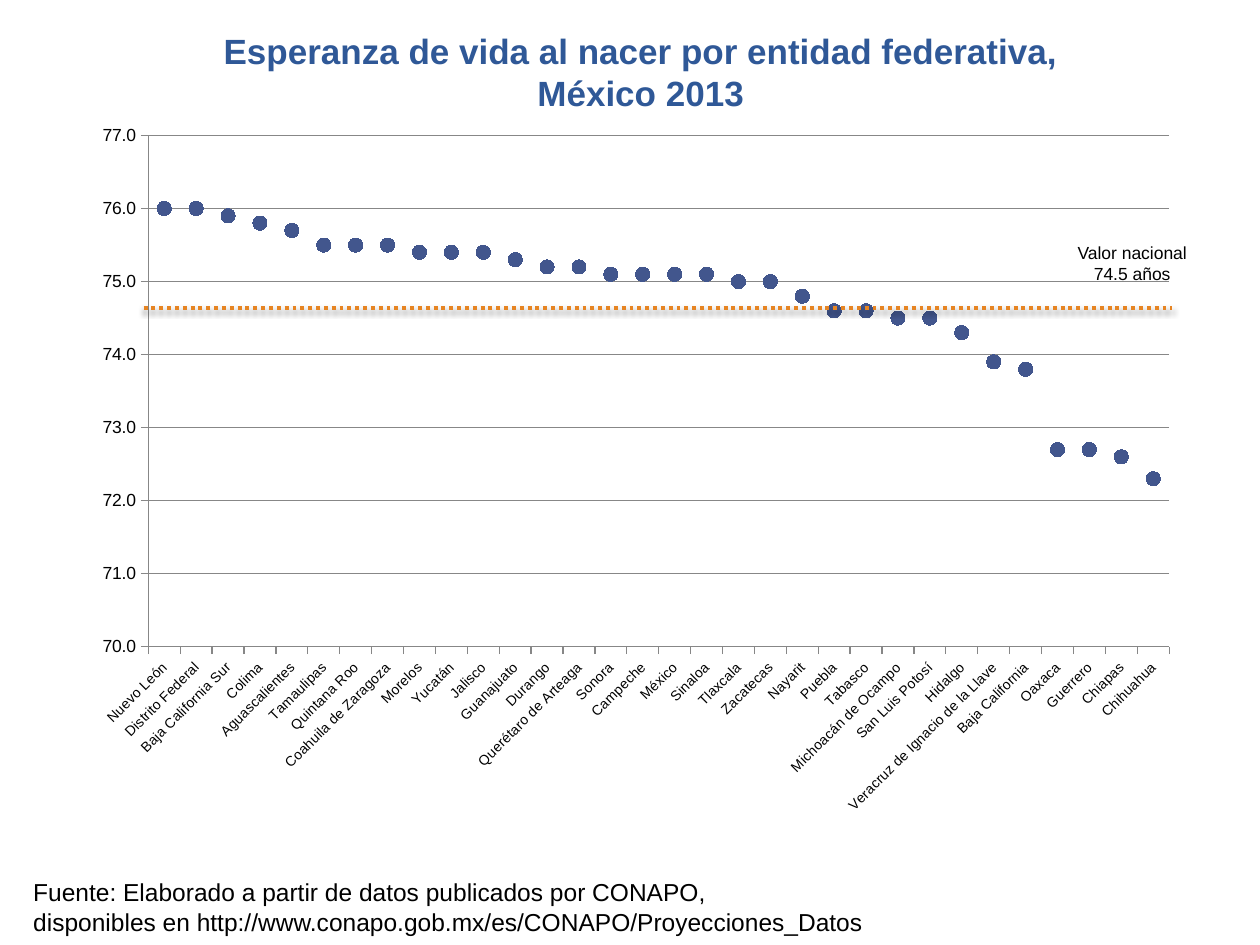
import pptx
import pptx.chart.data
import pptx.dml.color
import pptx.enum.chart
import pptx.enum.dml
import pptx.enum.shapes
import pptx.enum.text
import pptx.oxml
import pptx.oxml.ns
import pptx.util

COLUMNS, ROWS = 100, 75
BLACK = "000000"
GRID_GRAY = "878787"
MARKER_BLUE = "42568D"
LEFT = pptx.enum.text.PP_ALIGN.LEFT
CENTER = pptx.enum.text.PP_ALIGN.CENTER

LIFE_EXPECTANCY = {
    "Nuevo León": 76.0, "Distrito Federal": 76.0, "Baja California Sur": 75.9,
    "Colima": 75.8, "Aguascalientes": 75.7, "Tamaulipas": 75.5,
    "Quintana Roo": 75.5, "Coahuila de Zaragoza": 75.5, "Morelos": 75.4,
    "Yucatán": 75.4, "Jalisco": 75.4, "Guanajuato": 75.3, "Durango": 75.2,
    "Querétaro de Arteaga": 75.2, "Sonora": 75.1, "Campeche": 75.1,
    "México": 75.1, "Sinaloa": 75.1, "Tlaxcala": 75.0, "Zacatecas": 75.0,
    "Nayarit": 74.8, "Puebla": 74.6, "Tabasco": 74.6,
    "Michoacán de Ocampo": 74.5, "San Luis Potosí": 74.5, "Hidalgo": 74.3,
    "Veracruz de Ignacio de la Llave": 73.9, "Baja California": 73.8,
    "Oaxaca": 72.7, "Guerrero": 72.7, "Chiapas": 72.6, "Chihuahua": 72.3,
}


def color(value):
    return pptx.dml.color.RGBColor.from_string(value)


def xml(tag, content):
    namespaces = pptx.oxml.ns.nsdecls("a", "c")
    return pptx.oxml.parse_xml(f"<{tag} {namespaces}>{content}</{tag}>")


def style_font(font, size, fill=BLACK, bold=False):
    font.name = "Arial"
    font.size = pptx.util.Pt(size)
    font.bold = bold
    font.color.rgb = color(fill)


def write_text(shape, lines, size, fill=BLACK, bold=False, align=LEFT, wrap=True):
    frame = shape.text_frame
    frame.word_wrap = wrap
    frame.vertical_anchor = pptx.enum.text.MSO_ANCHOR.TOP
    frame.auto_size = pptx.enum.text.MSO_AUTO_SIZE.SHAPE_TO_FIT_TEXT
    frame.text = "\n".join(lines)
    for paragraph in frame.paragraphs:
        paragraph.alignment = align
        style_font(paragraph.font, size, fill, bold)


class SlideBuilder:
    def __init__(self, presentation):
        self.column = presentation.slide_width / COLUMNS
        self.row = presentation.slide_height / ROWS
        self.slide = presentation.slides.add_slide(presentation.slide_layouts[5])

    def place(self, left, top, width, height):
        return [round(left * self.column), round(top * self.row),
                round(width * self.column), round(height * self.row)]

    def title(self, box, text, **style):
        shape = self.slide.shapes.title
        shape.left, shape.top, shape.width, shape.height = self.place(*box)
        write_text(shape, [text], **style)

    def text(self, box, lines, **style):
        shape = self.slide.shapes.add_textbox(*self.place(*box))
        write_text(shape, lines, wrap=False, **style)

    def dotted_line(self, left, right, row, fill, width):
        connector = self.slide.shapes.add_connector(
            pptx.enum.shapes.MSO_CONNECTOR.STRAIGHT,
            *self.place(left, row, right, row))
        connector.line.color.rgb = color(fill)
        connector.line.width = pptx.util.Pt(width)
        connector.line.dash_style = pptx.enum.dml.MSO_LINE.ROUND_DOT
        connector._element.spPr.append(xml(
            "a:effectLst",
            '<a:outerShdw blurRad="39370" dist="20320" dir="5400000" rotWithShape="0">'
            '<a:srgbClr val="000000"><a:alpha val="38000"/></a:srgbClr></a:outerShdw>'))

    def marker_chart(self, box, values, plot_box):
        data = pptx.chart.data.CategoryChartData(number_format="##0.0")
        data.categories = list(values)
        data.add_series("Series 1", list(values.values()))
        chart = self.slide.shapes.add_chart(
            pptx.enum.chart.XL_CHART_TYPE.LINE_MARKERS, *self.place(*box), data).chart
        chart.has_legend = False
        chart.has_title = False
        style_font(chart.font, 10)
        chart.plots[0].vary_by_categories = False
        self.style_series(chart.plots[0].series[0])
        self.style_axes(chart)
        self.fix_plot_area(chart, box, plot_box)

    def style_series(self, series):
        series.smooth = False
        series.format.line.fill.background()
        series.marker.style = pptx.enum.chart.XL_MARKER_STYLE.CIRCLE
        series.marker.size = 8
        series.marker.format.fill.solid()
        series.marker.format.fill.fore_color.rgb = color(MARKER_BLUE)
        series.marker.format.line.color.rgb = color(MARKER_BLUE)

    def style_axes(self, chart):
        value_axis, category_axis = chart.value_axis, chart.category_axis
        value_axis.minimum_scale, value_axis.maximum_scale = 70, 77
        value_axis.major_unit = 1
        value_axis.has_major_gridlines = True
        value_axis.tick_labels.number_format = "##0.0"
        value_axis.tick_labels.number_format_is_linked = False
        for axis, size in ((value_axis, 10), (category_axis, 8)):
            axis.major_tick_mark = pptx.enum.chart.XL_TICK_MARK.OUTSIDE
            axis.format.line.color.rgb = color(GRID_GRAY)
            style_font(axis.tick_labels.font, size)
        value_axis.major_gridlines.format.line.color.rgb = color(GRID_GRAY)
        label_body = category_axis._element.find(
            ".//" + pptx.oxml.ns.qn("a:bodyPr"))
        label_body.set("rot", "-2700000")
        label_body.set("vert", "horz")

    def fix_plot_area(self, chart, box, plot_box):
        left, top, width, height = box
        plot_left, plot_top, plot_width, plot_height = plot_box
        shares = ((plot_left - left) / width, (plot_top - top) / height,
                  plot_width / width, plot_height / height)
        area = chart._chartSpace.chart.plotArea
        for layout in area.findall(pptx.oxml.ns.qn("c:layout")):
            area.remove(layout)
        modes = '<c:layoutTarget val="inner"/><c:xMode val="edge"/><c:yMode val="edge"/>'
        sizes = "".join(f'<c:{key} val="{share:.5f}"/>' for key, share in zip("xywh", shares))
        area.insert(0, xml("c:layout", f"<c:manualLayout>{modes}{sizes}</c:manualLayout>"))


def main():
    presentation = pptx.Presentation()
    presentation.slide_width = pptx.util.Inches(10)
    presentation.slide_height = pptx.util.Inches(7.5)
    builder = SlideBuilder(presentation)
    builder.title((15.7, 1.85, 70.3, 7.7),
                  "Esperanza de vida al nacer por entidad federativa, México 2013",
                  size=20, fill="2F5897", bold=True, align=CENTER)
    builder.marker_chart((6.4, 8.9, 88.1, 56.9), LIFE_EXPECTANCY,
                         plot_box=(11.77, 10.76, 81.03, 40.58))
    builder.dotted_line(11.4, 93, 24.45, fill="E68422", width=2.25)
    builder.text((1.65, 69.13, 68.2, 5.7),
                 ["Fuente: Elaborado a partir de datos publicados por CONAPO,",
                  "disponibles en http://www.conapo.gob.mx/es/CONAPO/Proyecciones_Datos"],
                 size=14)
    builder.text((84.4, 18.7, 10.9, 4.4), ["Valor nacional", "74.5 años"],
                 size=10, align=CENTER)
    presentation.save("out.pptx")


if __name__ == "__main__":
    main()
